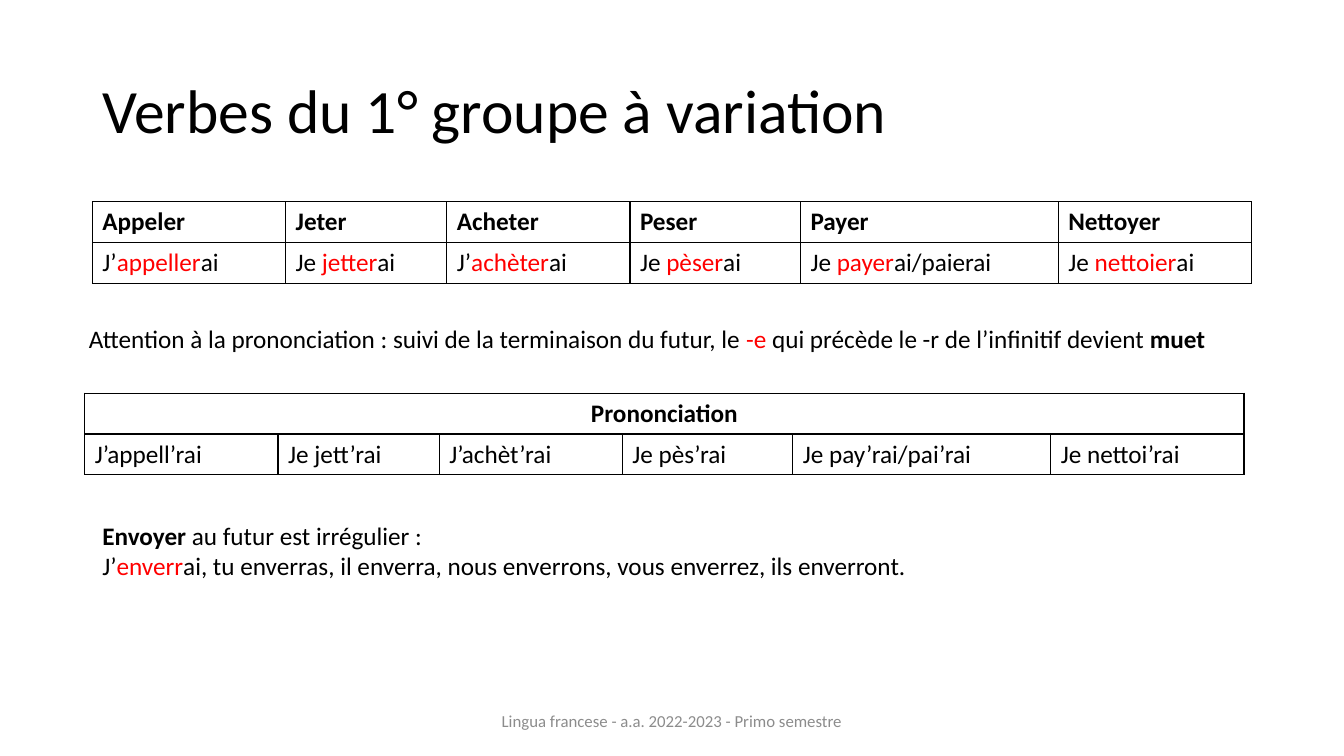
from dataclasses import dataclass

from lxml import etree
from pptx import Presentation
from pptx import util as u
from pptx.enum import text
from pptx.dml import color
from pptx.oxml import ns

COLOURS = {"ink": "000000", "accent": "FF0000", "footer": "8C8C8C"}
FONT = "Calibri"
WIDTH, HEIGHT = u.Inches(13.333), u.Inches(7.5)
GRID_COLUMNS, GRID_ROWS = 160, 90
VERB_COLUMNS = (23, 19.2, 21.8, 20.3, 30.7, 23)
TABLE_ROW = 4.87
LEFT, CENTRE = text.PP_ALIGN.LEFT, text.PP_ALIGN.CENTER
TOP, MIDDLE = text.MSO_ANCHOR.TOP, text.MSO_ANCHOR.MIDDLE


@dataclass(frozen=True)
class Run:
    """A stretch of text in one style."""
    words: str
    colour: str = "ink"
    bold: bool = False


@dataclass(frozen=True)
class TextBlock:
    """A text box placed in grid columns and rows."""
    column: float
    row: float
    columns: float
    rows: float
    paragraphs: list[list[Run]]
    size: int = 18
    align: text.PP_ALIGN = LEFT
    anchor: text.MSO_ANCHOR = TOP
    spacing: float = 1.0


@dataclass(frozen=True)
class VerbTable:
    """A table of verb forms, one list of runs to a cell."""
    column: float
    row: float
    cells: list[list[list[Run]]]
    merged_header: bool = False


@dataclass(frozen=True)
class Future:
    """A verb, its future form in three parts and its spoken form."""
    infinitive: str
    pronoun: str
    stem: str
    ending: str
    spoken: str


VERBS = [
    Future("Appeler", "J’", "appeller", "ai", "J’appell’rai"),
    Future("Jeter", "Je ", "jetter", "ai", "Je jett’rai"),
    Future("Acheter", "J’", "achèter", "ai", "J’achèt’rai"),
    Future("Peser", "Je ", "pèser", "ai", "Je pès’rai"),
    Future("Payer", "Je ", "payer", "ai/paierai", "Je pay’rai/pai’rai"),
    Future("Nettoyer", "Je ", "nettoier", "ai", "Je nettoi’rai"),
]

TABLES = [
    VerbTable(10.1, 46.8, [
        [[Run("Prononciation", bold=True)]],
        [[Run(verb.spoken)] for verb in VERBS],
    ], merged_header=True),
    VerbTable(11, 24, [
        [[Run(verb.infinitive, bold=True)] for verb in VERBS],
        [[Run(verb.pronoun), Run(verb.stem, "accent"), Run(verb.ending)] for verb in VERBS],
    ]),
]

TEXTS = [
    TextBlock(11, 4.8, 138, 17.4, [[Run("Verbes du 1° groupe à variation")]],
              size=44, anchor=MIDDLE, spacing=0.9),
    TextBlock(11, 61.3, 138, 8.5, [
        [Run("Envoyer", bold=True), Run(" au futur est irrégulier :")],
        [Run("J’"), Run("enverr", "accent"),
         Run("ai, tu enverras, il enverra, nous enverrons, vous enverrez, ils enverront.")],
    ]),
    TextBlock(9.4, 37.9, 136.4, 4.8, [[
        Run("Attention à la prononciation : suivi de la terminaison du futur, le "),
        Run("-e ", "accent"),
        Run("qui précède le -r de l’infinitif devient "),
        Run("muet", bold=True),
    ]]),
    TextBlock(53, 83.4, 54, 4.8,
              [[Run("Lingua francese - a.a. 2022-2023 - Primo semestre", "footer")]],
              size=12, align=CENTRE, anchor=MIDDLE),
]


def across(columns: float) -> u.Emu:
    """Turn grid columns into a length."""
    return u.Emu(round(WIDTH * columns / GRID_COLUMNS))


def down(rows: float) -> u.Emu:
    """Turn grid rows into a length."""
    return u.Emu(round(HEIGHT * rows / GRID_ROWS))


def write_runs(paragraph, runs: list[Run], size: int, align: text.PP_ALIGN) -> None:
    """Fill a paragraph run by run."""
    paragraph.alignment = align
    for item in runs:
        run = paragraph.add_run()
        run.text = item.words
        run.font.name = FONT
        run.font.size = u.Pt(size)
        run.font.bold = item.bold
        run.font.color.rgb = color.RGBColor.from_string(COLOURS[item.colour])


def draw_text(slide, block: TextBlock) -> None:
    """Draw a text box."""
    shape = slide.shapes.add_textbox(across(block.column), down(block.row),
                                     across(block.columns), down(block.rows))
    frame = shape.text_frame
    frame.word_wrap = True
    frame.vertical_anchor = block.anchor
    for index, runs in enumerate(block.paragraphs):
        paragraph = frame.add_paragraph() if index else frame.paragraphs[0]
        paragraph.line_spacing = block.spacing
        write_runs(paragraph, runs, block.size, block.align)


def outline_cell(cell) -> None:
    """Give a cell thin borders and no fill."""
    properties = cell._tc.get_or_add_tcPr()
    for side in ("a:lnL", "a:lnR", "a:lnT", "a:lnB"):
        line = etree.SubElement(properties, ns.qn(side), w=str(u.Pt(1)))
        fill = etree.SubElement(line, ns.qn("a:solidFill"))
        etree.SubElement(fill, ns.qn("a:srgbClr"), val=COLOURS["ink"])
    cell.fill.background()


def draw_table(slide, verb_table: VerbTable) -> None:
    """Draw a table of verb forms."""
    row_count = len(verb_table.cells)
    table = slide.shapes.add_table(
        row_count, len(VERB_COLUMNS), across(verb_table.column), down(verb_table.row),
        across(sum(VERB_COLUMNS)), down(TABLE_ROW * row_count)).table
    table.first_row = table.horz_banding = False
    for column, width in zip(table.columns, VERB_COLUMNS):
        column.width = across(width)
    for row in table.rows:
        row.height = down(TABLE_ROW)
    for cell in table.iter_cells():
        outline_cell(cell)
    if verb_table.merged_header:
        table.cell(0, 0).merge(table.cell(0, len(VERB_COLUMNS) - 1))
    for row_index, row_cells in enumerate(verb_table.cells):
        for column_index, runs in enumerate(row_cells):
            cell = table.cell(row_index, column_index)
            align = CENTRE if cell.is_merge_origin else LEFT
            write_runs(cell.text_frame.paragraphs[0], runs, 18, align)


def main() -> None:
    """Build and save the slide."""
    presentation = Presentation()
    presentation.slide_width, presentation.slide_height = WIDTH, HEIGHT
    slide = presentation.slides.add_slide(presentation.slide_layouts[6])
    for verb_table in TABLES:
        draw_table(slide, verb_table)
    for block in TEXTS:
        draw_text(slide, block)
    presentation.save("out.pptx")


if __name__ == "__main__":
    main()
